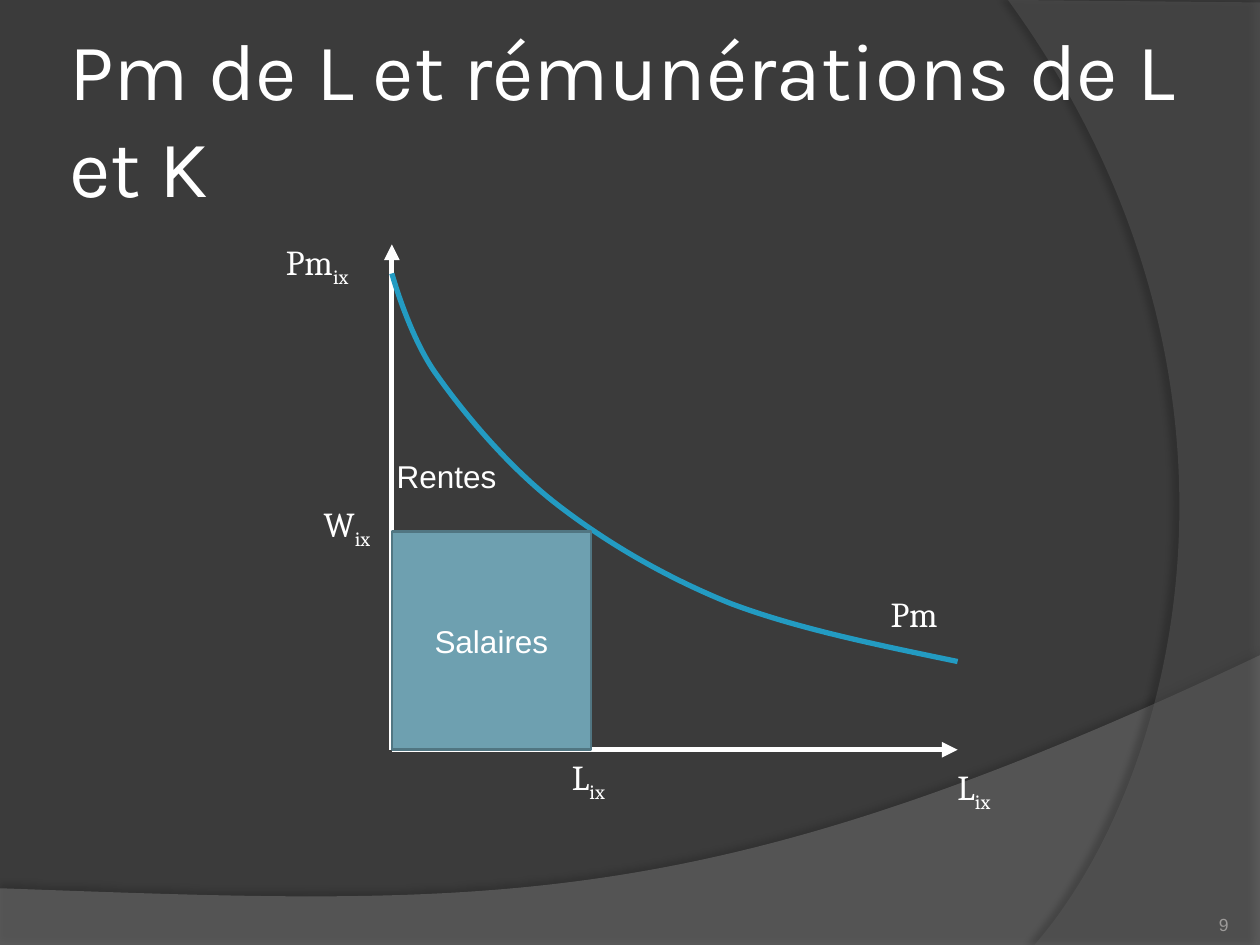
"""Build the slide on the marginal product of labour and the incomes of L and K."""
import lxml.etree
import pptx
import pptx.dml.color
import pptx.enum.dml
import pptx.enum.shapes
import pptx.enum.text
import pptx.oxml.ns
import pptx.util

Inches = pptx.util.Inches
Pt = pptx.util.Pt
RGBColor = pptx.dml.color.RGBColor
Align = pptx.enum.text.PP_ALIGN
Anchor = pptx.enum.text.MSO_ANCHOR
qn = pptx.oxml.ns.qn

COLORS = {
    "background": "3B3B3B", "lower_wave": "7F7F7F", "right_wave": "5E5E5E",
    "white": "FFFFFF", "curve": "239BC2", "wages": "6EA0B0",
    "wages_border": "517682", "number": "9D9B9A",
}
COLORS = {name: RGBColor.from_string(value) for name, value in COLORS.items()}


def add_outline(slide, start, segments, closed):
    """Draw straight (one point) and cubic (three points) segments from start."""
    builder = slide.shapes.build_freeform(Inches(start[0]), Inches(start[1]))
    ends = [(Inches(segment[-1][0]), Inches(segment[-1][1])) for segment in segments]
    builder.add_line_segments(ends, close=closed)
    shape = builder.convert_to_shape()
    shape.shadow.inherit = False
    nodes = list(shape._element.spPr.iter(qn("a:lnTo")))
    for node, segment in zip(nodes, segments):
        if len(segment) == 3:
            node.tag = qn("a:cubicBezTo")
            for index, (x, y) in enumerate(segment[:2]):
                control = lxml.etree.Element(
                    qn("a:pt"), x=str(Inches(x) - shape.left), y=str(Inches(y) - shape.top))
                node.insert(index, control)
    return shape


def add_run(paragraph, text, font_name, size, color="white"):
    """Append one formatted run."""
    run = paragraph.add_run()
    run.text = text
    run.font.name = font_name
    run.font.size = Pt(size)
    run.font.color.rgb = COLORS[color]
    return run


presentation = pptx.Presentation()
presentation.slide_width = Inches(10)
presentation.slide_height = Inches(7.5)
slide = presentation.slides.add_slide(presentation.slide_layouts[5])
slide.background.fill.solid()
slide.background.fill.fore_color.rgb = COLORS["background"]

title = slide.shapes.title
title.left, title.top = Inches(0.5), Inches(0.3)
title.width, title.height = Inches(9.5), Inches(1.25)
frame = title.text_frame
frame.word_wrap = True
frame.vertical_anchor = Anchor.MIDDLE
frame.margin_left = frame.margin_right = Inches(0.05)
frame.margin_top = frame.margin_bottom = Inches(0.05)
frame.paragraphs[0].alignment = Align.LEFT
add_run(frame.paragraphs[0], "Pm de L et rémunérations de L et K", "Karla", 46)

waves = [
    ("lower_wave", 45, (0, 7.05),
     [[(0, 7.51)], [(10, 7.51)], [(10, 5.2)], [(5.59, 7.29), (3.91, 7.19), (0, 7.05)]],
     35, 3.5, 270),
    ("right_wave", 40, (10, 0.02),
     [[(10, 7.5)], [(8.21, 7.5)], [(9.35, 6.19), (10.18, 3), (8, 0)], [(10, 0.02)]],
     45, 4, 180),
]
for color, opacity, start, segments, shadow_opacity, distance, angle in waves:
    wave = add_outline(slide, start, segments, True)
    wave.fill.solid()
    wave.fill.fore_color.rgb = COLORS[color]
    wave.line.fill.background()
    fill_color = wave._element.spPr.find(qn("a:solidFill"))[0]
    lxml.etree.SubElement(fill_color, qn("a:alpha"), val=str(opacity * 1000))
    effects = wave._element.spPr.find(qn("a:effectLst"))
    shadow = lxml.etree.SubElement(
        effects, qn("a:outerShdw"), blurRad=str(Pt(4)), dist=str(Pt(distance)),
        dir=str(angle * 60000), algn="ctr", rotWithShape="0")
    shadow_color = lxml.etree.SubElement(shadow, qn("a:srgbClr"), val="000000")
    lxml.etree.SubElement(shadow_color, qn("a:alpha"), val=str(shadow_opacity * 1000))
    title._element.addprevious(wave._element)

origin = (3.11, 5.95)
equilibrium = (4.69, 4.22)
lines = [
    (origin, (7.6, 5.95), 3, True),
    (origin, (3.11, 1.94), 3, True),
    ((3.19, 4.22), equilibrium, 0.75, False),
    (equilibrium, (4.69, 5.95), 0.75, False),
]
for start, end, width, is_axis in lines:
    connector = slide.shapes.add_connector(
        pptx.enum.shapes.MSO_CONNECTOR.STRAIGHT,
        *(Inches(value) for value in (*start, *end)))
    connector.line.color.rgb = COLORS["white"]
    connector.line.width = Pt(width)
    if is_axis:
        lxml.etree.SubElement(connector.line._get_or_add_ln(), qn("a:tailEnd"), type="triangle")
    else:
        connector.line.dash_style = pptx.enum.dml.MSO_LINE.DASH_DOT
    lxml.etree.SubElement(connector._element.spPr, qn("a:effectLst"))

curve = add_outline(slide, (7.6, 5.25), [
    [(6.97, 5.12), (6.33, 4.99), (5.8, 4.79)],
    [(5.28, 4.58), (4.82, 4.31), (4.43, 4.01)],
    [(4.04, 3.71), (3.69, 3.29), (3.47, 2.98)],
    [(3.25, 2.68), (3.11, 2.17), (3.11, 2.17)],
], False)
curve.fill.background()
curve.line.color.rgb = COLORS["curve"]
curve.line.width = Pt(3)

wages = slide.shapes.add_shape(
    pptx.enum.shapes.MSO_SHAPE.RECTANGLE,
    Inches(origin[0]), Inches(equilibrium[1]),
    Inches(equilibrium[0] - origin[0]), Inches(origin[1] - equilibrium[1]))
wages.shadow.inherit = False
wages.fill.solid()
wages.fill.fore_color.rgb = COLORS["wages"]
wages.line.color.rgb = COLORS["wages_border"]
wages.line.width = Pt(1.5)
wages.text_frame.vertical_anchor = Anchor.MIDDLE
wages.text_frame.paragraphs[0].alignment = Align.CENTER
add_run(wages.text_frame.paragraphs[0], "Salaires", "Arial", 18)

labels = [
    ("L", "ix", 7.5, 6.03, 0.52, 0.44, "Cambria", 20, False),
    ("Pm", "ix", 2.17, 1.86, 0.94, 0.44, "Cambria", 20, True),
    ("Pm", "", 6.97, 4.65, 0.87, 0.44, "Cambria", 20, True),
    ("W", "ix", 2.47, 3.94, 0.72, 0.44, "Cambria", 20, True),
    ("L", "ix", 4.44, 5.95, 0.72, 0.44, "Cambria", 20, True),
    ("Rentes", "", 3.05, 3.58, 1, 0.4, "Arial", 18, False),
]
for text, subscript, left, top, width, height, font_name, size, wrap in labels:
    label = slide.shapes.add_textbox(Inches(left), Inches(top), Inches(width), Inches(height))
    label.text_frame.word_wrap = wrap
    label.text_frame.auto_size = pptx.enum.text.MSO_AUTO_SIZE.SHAPE_TO_FIT_TEXT
    paragraph = label.text_frame.paragraphs[0]
    add_run(paragraph, text, font_name, size)
    if subscript:
        run = add_run(paragraph, subscript, font_name, size)
        run.font._element.set("baseline", "-25000")

number = slide.shapes.add_textbox(Inches(8.92), Inches(7.02), Inches(0.83), Inches(0.4))
frame = number.text_frame
frame.word_wrap = True
frame.vertical_anchor = Anchor.BOTTOM
frame.margin_left = frame.margin_right = frame.margin_top = frame.margin_bottom = Inches(0)
frame.paragraphs[0].alignment = Align.RIGHT
add_run(frame.paragraphs[0], "9", "Arial", 10, "number")

presentation.save("out.pptx")
